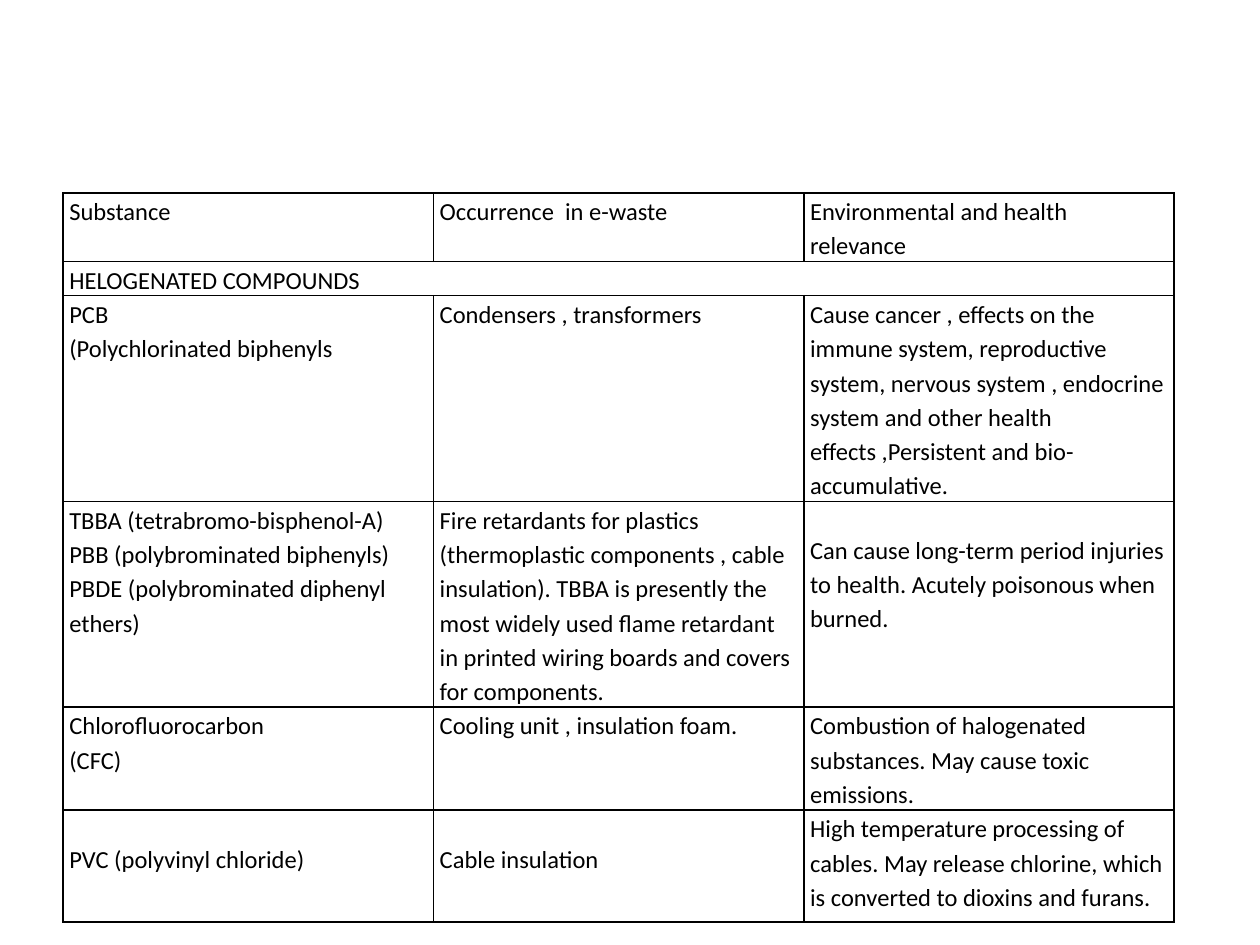
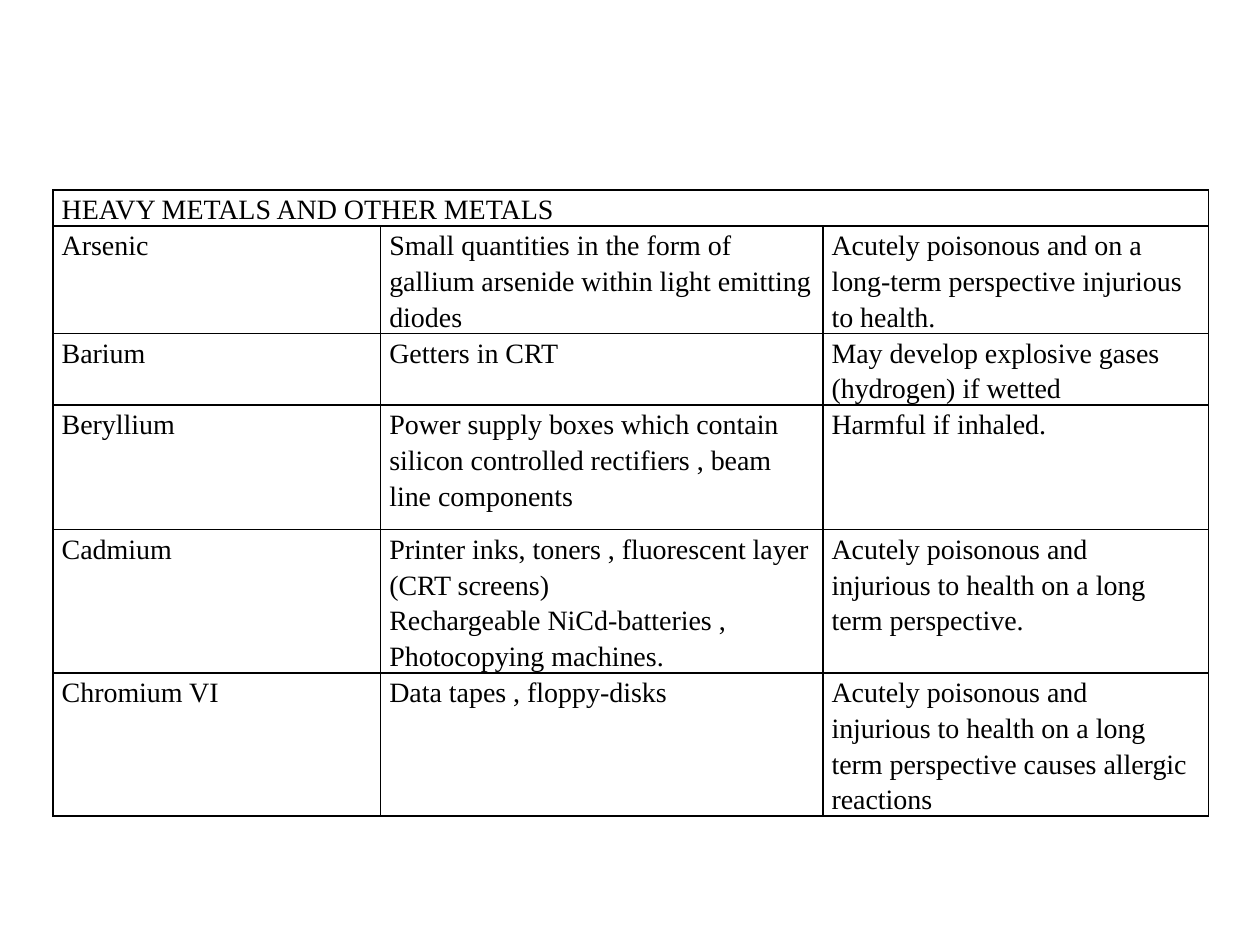
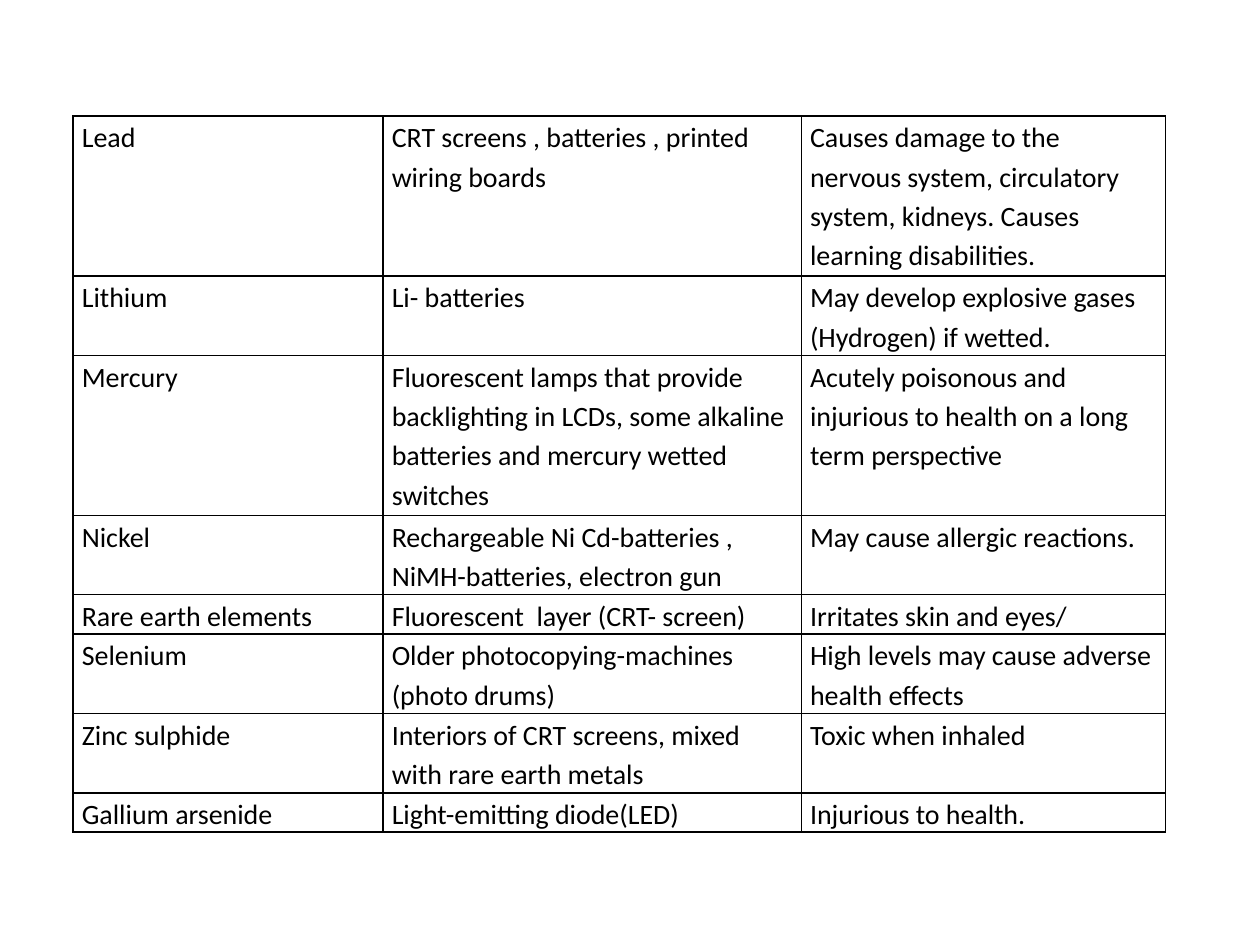
from lxml.etree import SubElement
from pptx import Presentation
from pptx.dml.color import RGBColor
from pptx.oxml.ns import qn
from pptx.util import Inches, Pt

# Shared style
BLACK = RGBColor(0x00, 0x00, 0x00)
WHITE = RGBColor(0xFF, 0xFF, 0xFF)
LINE_SPACING = 1.15
LOWERED_TOP = 0.24  # drops a cell's text by one line


def add_borders(cell):
    """Draw a thin black line on all four sides of a cell."""
    properties = cell._tc.get_or_add_tcPr()
    for position, side in enumerate(("a:lnL", "a:lnR", "a:lnT", "a:lnB")):
        line = SubElement(properties, qn(side), w=str(Pt(1)))
        fill = SubElement(line, qn("a:solidFill"))
        SubElement(fill, qn("a:srgbClr"), val=str(BLACK))
        properties.insert(position, line)


# Tables, one per slide; a row with a single text spans all columns
TABLES = [
    {
        "at": (0.5, 1.53, 8.83, 5.45),
        "font": "Calibri", "size": 14, "inset": 0.05,
        "columns": (2.94, 2.94, 2.94),
        "heights": (0.36, 0.18, 1.24, 1.24, 0.53, 0.89),
        "lowered": {(3, 2), (5, 0), (5, 1)},
        "rows": [
            ("Substance", "Occurrence  in e-waste",
             "Environmental and health relevance"),
            ("HELOGENATED COMPOUNDS",),
            ("PCB\n(Polychlorinated biphenyls", "Condensers , transformers",
             "Cause cancer , effects on the immune system, reproductive system, "
             "nervous system , endocrine system and other health effects "
             ",Persistent and bio-accumulative."),
            ("TBBA (tetrabromo-bisphenol-A) PBB (polybrominated biphenyls) "
             "PBDE (polybrominated diphenyl ethers)",
             "Fire retardants for plastics (thermoplastic components , cable "
             "insulation). TBBA is presently the most widely used flame "
             "retardant in printed wiring boards and covers for components.",
             "Can cause long-term period injuries to health. Acutely "
             "poisonous when burned."),
            ("Chlorofluorocarbon\n(CFC)", "Cooling unit , insulation foam.",
             "Combustion of halogenated substances. May cause toxic emissions."),
            ("PVC (polyvinyl chloride)", "Cable insulation",
             "High temperature processing of cables. May release chlorine, "
             "which is converted to dioxins and furans."),
        ],
    },
    {
        "at": (0.42, 1.51, 9.17, 5.28),
        "font": "Times New Roman", "size": 16, "inset": 0.07,
        "columns": (2.6, 3.51, 3.06),
        "heights": (0.25, 0.74, 0.49, 0.99, 0.99, 0.99),
        "lowered": set(),
        "rows": [
            ("HEAVY METALS AND OTHER METALS",),
            ("Arsenic",
             "Small quantities in the form of gallium arsenide within light "
             "emitting diodes",
             "Acutely poisonous and on a long-term perspective injurious to "
             "health."),
            ("Barium", "Getters in CRT",
             "May develop explosive gases (hydrogen) if wetted"),
            ("Beryllium",
             "Power supply boxes which contain silicon controlled rectifiers , "
             "beam line components",
             "Harmful if inhaled."),
            ("Cadmium",
             "Printer inks, toners , fluorescent layer (CRT screens)\n"
             "Rechargeable NiCd-batteries ,\nPhotocopying machines.",
             "Acutely poisonous and  injurious to health on a long term "
             "perspective."),
            ("Chromium VI", "Data tapes , floppy-disks",
             "Acutely poisonous and  injurious to health on a long term "
             "perspective causes allergic reactions"),
        ],
    },
    {
        "at": (0.58, 0.92, 8.67, 5.67),
        "font": "Calibri", "size": 16, "inset": 0.07,
        "columns": (2.46, 3.32, 2.89),
        "heights": (1.27, 0.63, 1.27, 0.63, 0.3, 0.63, 0.63, 0.3),
        "lowered": set(),
        "rows": [
            ("Lead", "CRT screens , batteries , printed wiring boards",
             "Causes damage to the nervous system, circulatory system, "
             "kidneys. Causes learning disabilities."),
            ("Lithium", "Li- batteries",
             "May develop explosive gases (Hydrogen) if wetted."),
            ("Mercury",
             "Fluorescent lamps that provide backlighting in LCDs, some "
             "alkaline batteries and mercury wetted switches",
             "Acutely poisonous and injurious to health on a long term "
             "perspective"),
            ("Nickel",
             "Rechargeable Ni Cd-batteries , NiMH-batteries, electron gun",
             "May cause allergic reactions."),
            ("Rare earth elements", "Fluorescent  layer (CRT- screen)",
             "Irritates skin and eyes/"),
            ("Selenium", "Older photocopying-machines (photo drums)",
             "High levels may cause adverse health effects"),
            ("Zinc sulphide",
             "Interiors of CRT screens, mixed with rare earth metals",
             "Toxic when inhaled"),
            ("Gallium arsenide", "Light-emitting diode(LED)",
             "Injurious to health."),
        ],
    },
]

deck = Presentation()
deck.slide_width, deck.slide_height = Inches(10), Inches(7.5)
blank_layout = deck.slide_layouts[6]

for data in TABLES:
    page = deck.slides.add_slide(blank_layout)
    page.background.fill.solid()
    page.background.fill.fore_color.rgb = WHITE

    # Table frame and grid
    left, top, width, height = (Inches(value) for value in data["at"])
    frame = page.shapes.add_table(
        len(data["rows"]), len(data["columns"]), left, top, width, height)
    table = frame.table
    table.first_row = table.horz_banding = False
    for column, column_width in zip(table.columns, data["columns"]):
        column.width = Inches(column_width)
    for row, row_height in zip(table.rows, data["heights"]):
        row.height = Inches(row_height)
    frame.width, frame.height = width, height

    # Cell style
    for cell in table.iter_cells():
        cell.margin_left = cell.margin_right = Inches(data["inset"])
        cell.margin_top = cell.margin_bottom = 0
        cell.fill.background()
        add_borders(cell)

    # Cell text
    for row_index, texts in enumerate(data["rows"]):
        if len(texts) == 1:
            last_cell = table.cell(row_index, len(data["columns"]) - 1)
            table.cell(row_index, 0).merge(last_cell)
        for column_index, text in enumerate(texts):
            cell = table.cell(row_index, column_index)
            if (row_index, column_index) in data["lowered"]:
                cell.margin_top = Inches(LOWERED_TOP)
            for line_index, line in enumerate(text.split("\n")):
                frame_text = cell.text_frame
                para = frame_text.add_paragraph() if line_index else frame_text.paragraphs[0]
                para.line_spacing = LINE_SPACING
                span = para.add_run()
                span.text = line
                span.font.name = data["font"]
                span.font.size = Pt(data["size"])
                span.font.color.rgb = BLACK

deck.save("out.pptx")
